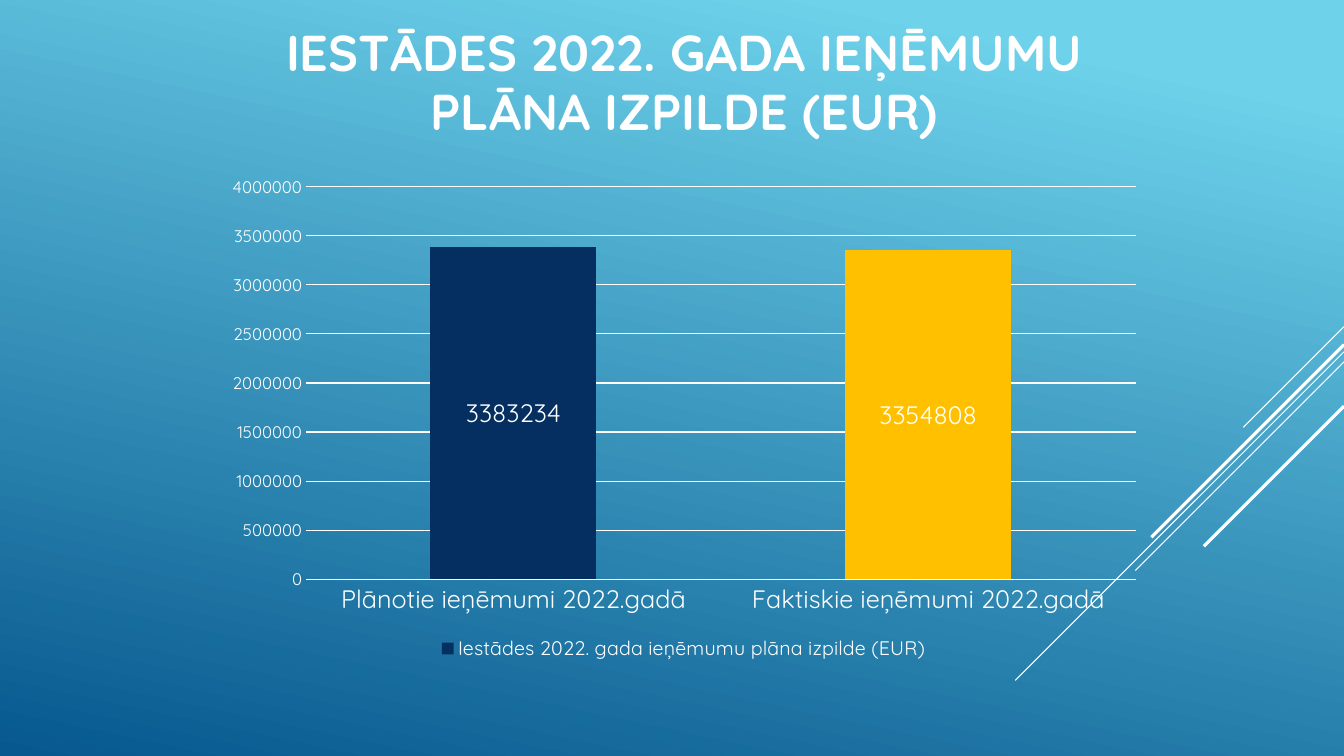
from lxml import etree
from pptx import Presentation
from pptx import util as u
from pptx.chart import data
from pptx.dml.color import RGBColor
from pptx.enum import chart as ch, shapes, text
from pptx.oxml.ns import qn

WHITE = RGBColor(0xFF, 0xFF, 0xFF)
SKY = RGBColor(0x6E, 0xD2, 0xEB)
DEEP = RGBColor(0x06, 0x58, 0x8E)
NAVY = RGBColor(0x05, 0x2F, 0x61)
GOLD = RGBColor(0xFF, 0xC0, 0x00)
FACE = "Quicksand"
WIDTH, HEIGHT = 13.33, 7.5
LEFT, SPAN = 2.12, 9.33
SPLIT = 1.65  # where the title ends and the chart begins

# Diagonal rays: start height at the right edge, run, line weight
RAYS = [
    (3.24, 1, 0.75),
    (3.49, 3.26, 0.75),
    (3.59, 2.07, 0.75),
    (3.42, 1.91, 2.25),
    (4.03, 1.39, 2.25),
]
PLAN = {
    "Plānotie ieņēmumi 2022.gadā": 3383234,
    "Faktiskie ieņēmumi 2022.gadā": 3354808,
}


def style(font, size, bold=False):
    look = {"name": FACE, "size": u.Pt(size), "bold": bold}
    for key, value in look.items():
        setattr(font, key, value)
    font.color.rgb = WHITE


def stroke(line, weight=0.75):
    line.color.rgb = WHITE
    line.width = u.Pt(weight)


def paint_back(slide):
    fill = slide.background.fill
    fill.gradient()
    fill.gradient_angle = 258
    for stop, place, color in zip(fill.gradient_stops, (0.1, 1), (SKY, DEEP)):
        stop.position = place
        stop.color.rgb = color


def add_ray(slide, top, run, weight):
    """Draw a 45-degree line down and left from the right edge."""
    ends = (WIDTH, top, WIDTH - run, top + run)
    ray = slide.shapes.add_connector(
        shapes.MSO_CONNECTOR.STRAIGHT, *map(u.Inches, ends))
    stroke(ray.line, weight)
    etree.SubElement(ray._element.spPr, qn("a:effectLst"))


def add_title(slide, words):
    box = slide.shapes.add_textbox(*map(u.Inches, (LEFT, 0, SPAN, SPLIT)))
    frame = box.text_frame
    frame.word_wrap = True
    frame.vertical_anchor = text.MSO_ANCHOR.MIDDLE
    para = frame.paragraphs[0]
    para.text = words
    para.alignment = text.PP_ALIGN.CENTER
    para.line_spacing = 0.97
    style(para.font, 36, True)


def style_axes(chart):
    for axis, size in ((chart.category_axis, 18), (chart.value_axis, 12)):
        axis.major_tick_mark = axis.minor_tick_mark = ch.XL_TICK_MARK.NONE
        style(axis.tick_labels.font, size)
    stroke(chart.category_axis.format.line)
    values = chart.value_axis
    values.minimum_scale = 0
    values.has_major_gridlines = True
    stroke(values.major_gridlines.format.line)
    values.format.line.fill.background()


def style_bars(plot):
    plot.vary_by_categories = False
    plot.gap_width = 150
    plot.overlap = 100
    bars = plot.series[0]
    for part, color in ((bars, NAVY), (bars.points[1], GOLD)):
        part.format.fill.solid()
        part.format.fill.fore_color.rgb = color
    labels = bars.data_labels
    labels.show_value = True
    style(labels.font, 18)


def add_bars(slide, name):
    source = data.CategoryChartData()
    source.categories = list(PLAN)
    source.add_series(name, list(PLAN.values()))
    chart = slide.shapes.add_chart(
        ch.XL_CHART_TYPE.COLUMN_STACKED,
        *map(u.Inches, (LEFT, SPLIT, SPAN, 4.95)), source).chart
    chart.has_title = False
    style(chart.font, 10)
    style_axes(chart)
    style_bars(chart.plots[0])
    chart.has_legend = True
    chart.legend.position = ch.XL_LEGEND_POSITION.BOTTOM
    chart.legend.include_in_layout = False
    style(chart.legend.font, 14)


def main():
    deck = Presentation()
    deck.slide_width, deck.slide_height = u.Inches(WIDTH), u.Inches(HEIGHT)
    slide = deck.slides.add_slide(deck.slide_layouts[6])
    paint_back(slide)
    for ray in RAYS:
        add_ray(slide, *ray)
    add_title(slide, "IESTĀDES 2022. GADA IEŅĒMUMU PLĀNA IZPILDE (EUR)")
    add_bars(slide, "Iestādes 2022. gada ieņēmumu plāna izpilde (EUR)")
    deck.save("out.pptx")


if __name__ == "__main__":
    main()
